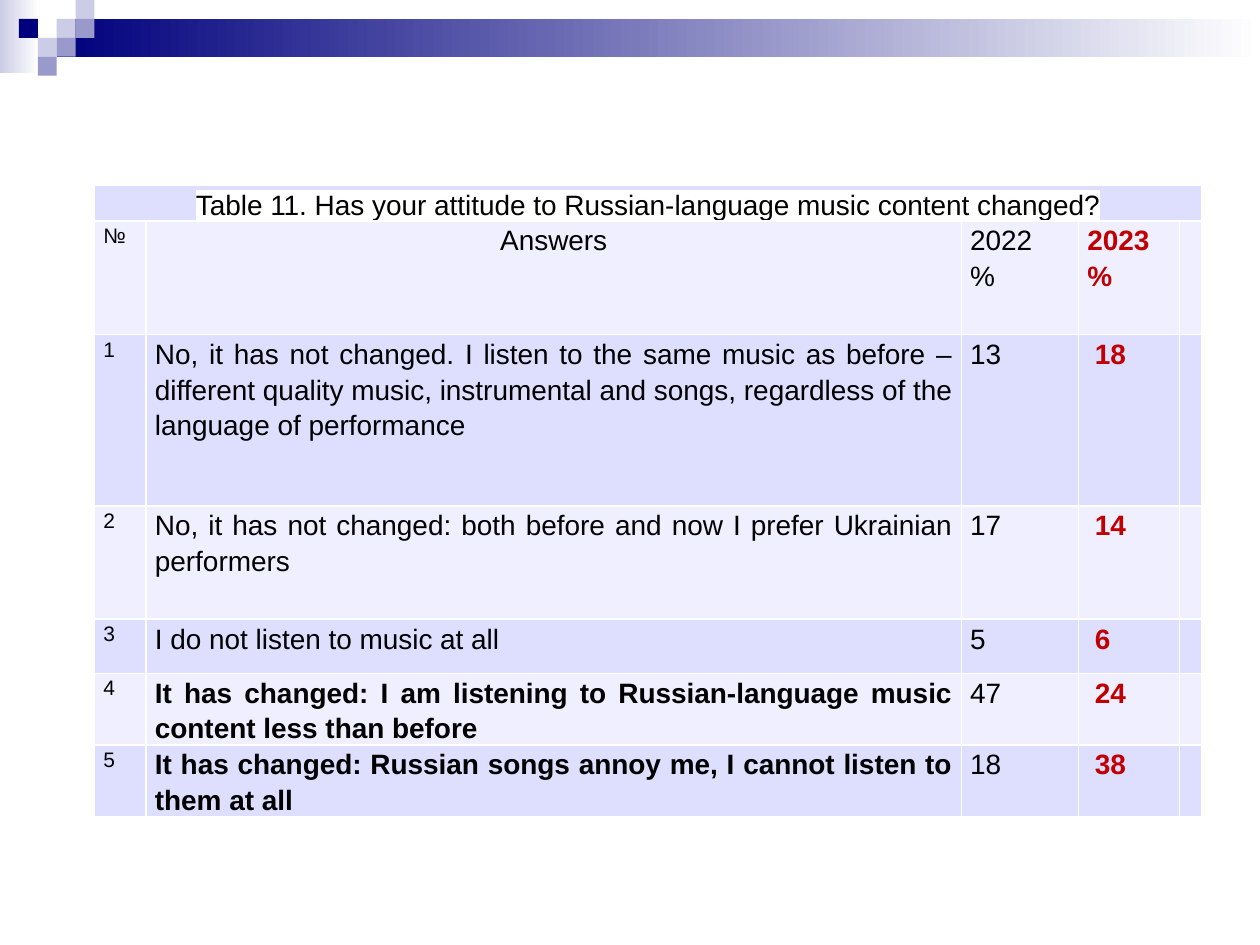
from lxml.etree import SubElement
from pptx import Presentation
from pptx.dml.color import RGBColor
from pptx.enum.shapes import MSO_SHAPE
from pptx.enum.text import PP_ALIGN
from pptx.oxml.ns import qn
from pptx.util import Inches, Pt

COLORS = {
    "navy": "00007D", "violet": "9999CC", "lilac": "CCCCE6", "white": "FFFFFF",
    "dark_row": "DEDEFF", "light_row": "EFEFFF", "black": "000000", "red": "C00000",
}
TITLE = "Table 11. Has your attitude to Russian-language music content changed?"
HEADERS = ["№", "Answers", "2022\n%", "2023%"]
ANSWERS = [
    ("No, it has not changed. I listen to the same music as before – different quality "
     "music, instrumental and songs, regardless of the language of performance", 13, 18, False),
    ("No, it has not changed: both before and now I prefer Ukrainian performers", 17, 14, False),
    ("I do not listen to music at all", 5, 6, False),
    ("It has changed: I am listening to Russian-language music content less than before",
     47, 24, True),
    ("It has changed: Russian songs annoy me, I cannot listen to them at all", 18, 38, True),
]
COLUMN_WIDTHS = [0.41, 6.47, 0.93, 0.8, 0.13]
ROW_HEIGHTS = [0.28, 0.9, 1.36, 0.9, 0.43, 0.57, 0.57]
TABLE_LEFT, TABLE_TOP = 0.75, 1.47
CELL_MARGIN, VALUE_MARGIN = 0.07, 0.13

UNIT = 0.15
GRADIENT_BARS = [
    ((0, 0, 0.31, 0.58), "lilac"),
    ((3 * UNIT, UNIT, 10 - 3 * UNIT, 2 * UNIT), "navy"),
]
SQUARES = [
    (3, 1, "lilac"), (4, 0, "lilac"), (4, 1, "violet"), (2, 2, "lilac"),
    (1, 1, "navy"), (3, 2, "violet"), (2, 3, "violet"),
]


def color(name):
    return RGBColor.from_string(COLORS[name])


def add_block(slide, box, start, end=None):
    shape = slide.shapes.add_shape(MSO_SHAPE.RECTANGLE, *map(Inches, box))
    shape.shadow.inherit = False
    shape.line.fill.background()
    if end is None:
        shape.fill.solid()
        shape.fill.fore_color.rgb = color(start)
        return
    shape.fill.gradient()
    shape.fill.gradient_angle = 0
    for stop, name, position in zip(shape.fill.gradient_stops, (start, end), (0, 1)):
        stop.color.rgb = color(name)
        stop.position = position


def style_cell(cell, fill):
    properties = cell._tc.get_or_add_tcPr()
    for side in ("a:lnL", "a:lnR", "a:lnT", "a:lnB"):
        line = SubElement(properties, qn(side), w=str(Pt(1)))
        line_fill = SubElement(line, qn("a:solidFill"))
        SubElement(line_fill, qn("a:srgbClr"), val=COLORS["white"])
    cell.fill.solid()
    cell.fill.fore_color.rgb = color(fill)
    cell.margin_left = cell.margin_right = Inches(CELL_MARGIN)
    cell.margin_top = cell.margin_bottom = 0


def write_text(cell, text, size=16, ink="black", bold=False, align=PP_ALIGN.JUSTIFY,
               margin=CELL_MARGIN, highlight=None):
    cell.margin_left = Inches(margin)
    cell.text_frame.text = text
    for paragraph in cell.text_frame.paragraphs:
        paragraph.alignment = align
        paragraph.line_spacing = 1.15
        for run in paragraph.runs:
            run.font.size = Pt(size)
            run.font.bold = bold
            run.font.color.rgb = color(ink)
            if highlight:
                marker = SubElement(run.font._element, qn("a:highlight"))
                SubElement(marker, qn("a:srgbClr"), val=COLORS[highlight])
            run.font.name = "Arial"


def add_answer_table(slide):
    frame = slide.shapes.add_table(
        len(ROW_HEIGHTS), len(COLUMN_WIDTHS), Inches(TABLE_LEFT), Inches(TABLE_TOP),
        Inches(sum(COLUMN_WIDTHS)), Inches(sum(ROW_HEIGHTS)))
    table = frame.table
    table.first_row = table.horz_banding = False
    for column, width in zip(table.columns, COLUMN_WIDTHS):
        column.width = Inches(width)
    for index, (row, height) in enumerate(zip(table.rows, ROW_HEIGHTS)):
        row.height = Inches(height)
        for cell in row.cells:
            style_cell(cell, "light_row" if index % 2 else "dark_row")
        row.cells[len(COLUMN_WIDTHS) - 1].margin_left = 0
        row.cells[len(COLUMN_WIDTHS) - 1].margin_right = 0

    table.cell(0, 0).merge(table.cell(0, len(COLUMN_WIDTHS) - 1))
    write_text(table.cell(0, 0), TITLE, align=PP_ALIGN.CENTER, highlight="white")

    number, answer, earlier, later = HEADERS
    write_text(table.cell(1, 0), number, size=12)
    write_text(table.cell(1, 1), answer, align=PP_ALIGN.CENTER)
    write_text(table.cell(1, 2), earlier)
    write_text(table.cell(1, 3), later, ink="red", bold=True)

    for number, (answer, earlier, later, bold) in enumerate(ANSWERS, start=1):
        row = number + 1
        write_text(table.cell(row, 0), str(number), size=12)
        write_text(table.cell(row, 1), answer, bold=bold)
        write_text(table.cell(row, 2), str(earlier))
        write_text(table.cell(row, 3), str(later), ink="red", bold=True, margin=VALUE_MARGIN)


def main():
    presentation = Presentation()
    presentation.slide_width, presentation.slide_height = Inches(10), Inches(7.5)
    slide = presentation.slides.add_slide(presentation.slide_layouts[6])
    for box, start in GRADIENT_BARS:
        add_block(slide, box, start, "white")
    for column, row, fill in SQUARES:
        add_block(slide, (column * UNIT, row * UNIT, UNIT, UNIT), fill)
    add_answer_table(slide)
    presentation.save("out.pptx")


if __name__ == "__main__":
    main()
